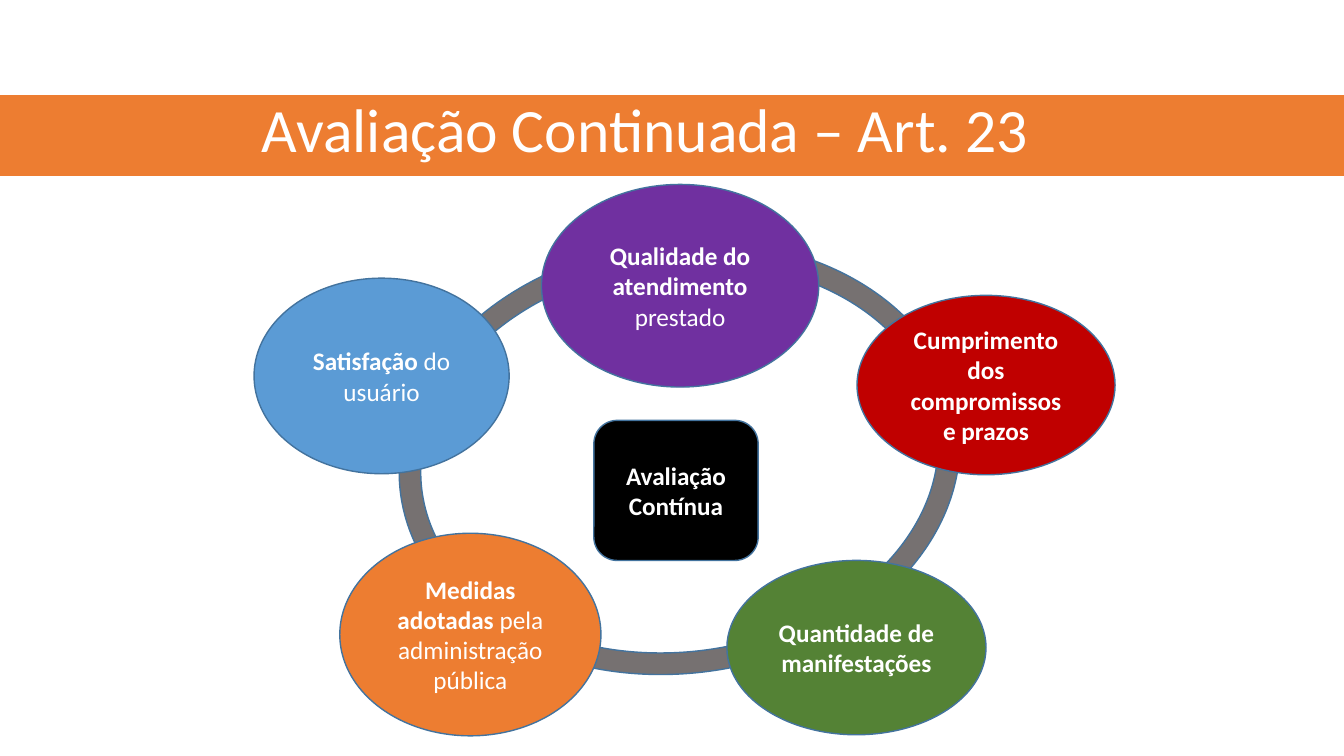
from dataclasses import dataclass

from pptx import Presentation
from pptx.dml.color import RGBColor
from pptx.enum.shapes import MSO_SHAPE
from pptx.enum.text import MSO_ANCHOR, PP_ALIGN
from pptx.util import Emu, Pt

OVAL = MSO_SHAPE.OVAL
RING = MSO_SHAPE.DONUT
RECT = MSO_SHAPE.RECTANGLE
CORE = MSO_SHAPE.FLOWCHART_ALTERNATE_PROCESS
MIDDLE = MSO_ANCHOR.MIDDLE
CENTER = PP_ALIGN.CENTER
SCALE = 9144


@dataclass(frozen=True)
class Theme:
    font: str = "Calibri"
    title: int = 44
    body: int = 18
    white: str = "FFFFFF"
    edge: str = "43739E"
    gray: str = "767171"
    blue: str = "5B9BD5"
    orange: str = "ED7D31"
    purple: str = "7030A0"
    red: str = "C00000"
    green: str = "548235"
    black: str = "000000"


class Board:
    def __init__(self, slide, theme):
        self.slide = slide
        self.theme = theme

    def place(self, box):
        return [Emu(n * SCALE) for n in box]

    def shape(self, kind, box, fill, edge=None):
        item = self.slide.shapes.add_shape(kind, *self.place(box))
        item.shadow.inherit = False
        item.fill.solid()
        item.fill.fore_color.rgb = RGBColor.from_string(fill)
        item.line.color.rgb = RGBColor.from_string(edge or self.theme.edge)
        item.line.width = Pt(1)
        return item

    def label(self, item, runs, size):
        frame = item.text_frame
        frame.word_wrap = True
        frame.vertical_anchor = MIDDLE
        para = frame.paragraphs[0]
        para.alignment = CENTER
        for text, bold in runs:
            run = para.add_run()
            run.text = text
            run.font.name = self.theme.font
            run.font.size = Pt(size)
            run.font.bold = bold
            run.font.color.rgb = RGBColor.from_string(self.theme.white)
        return para

    def ring(self, box, turn, width):
        item = self.shape(RING, box, self.theme.gray)
        item.rotation = turn
        item.adjustments[0] = width

    def node(self, kind, box, fill, *runs):
        self.label(self.shape(kind, box, fill), runs, self.theme.body)

    def title(self, box, text):
        item = self.slide.shapes.add_textbox(*self.place(box))
        para = self.label(item, [(text, False)], self.theme.title)
        para.line_spacing = 0.9


def main():
    deck = Presentation()
    deck.slide_width = Emu(1333 * SCALE)
    deck.slide_height = Emu(750 * SCALE)
    theme = Theme()
    board = Board(deck.slides.add_slide(deck.slide_layouts[6]), theme)

    board.ring((395, 240, 558, 428), 352.7, 0.05)
    nodes = [
        ((252, 276, 253, 194), theme.blue,
         ("Satisfação", True), (" do usuário", False)),
        ((337, 529, 259, 201), theme.orange,
         ("Medidas adotadas", True), (" pela administração pública", False)),
        ((537, 183, 275, 201), theme.purple,
         ("Qualidade do atendimento ", True), ("prestado", False)),
        ((850, 293, 256, 178), theme.red,
         ("Cumprimento dos compromissos e prazos", True)),
        ((721, 556, 257, 173), theme.green,
         ("Quantidade de manifestações", True)),
    ]
    for node in nodes:
        board.node(OVAL, *node)

    board.shape(RECT, (-30, 94, 1388, 81), theme.orange, theme.white)
    board.title((65, 89, 1150, 86), "Avaliação Continuada – Art. 23")
    board.node(CORE, (589, 417, 163, 139), theme.black,
               ("Avaliação Contínua", True))

    deck.save("out.pptx")


if __name__ == "__main__":
    main()
